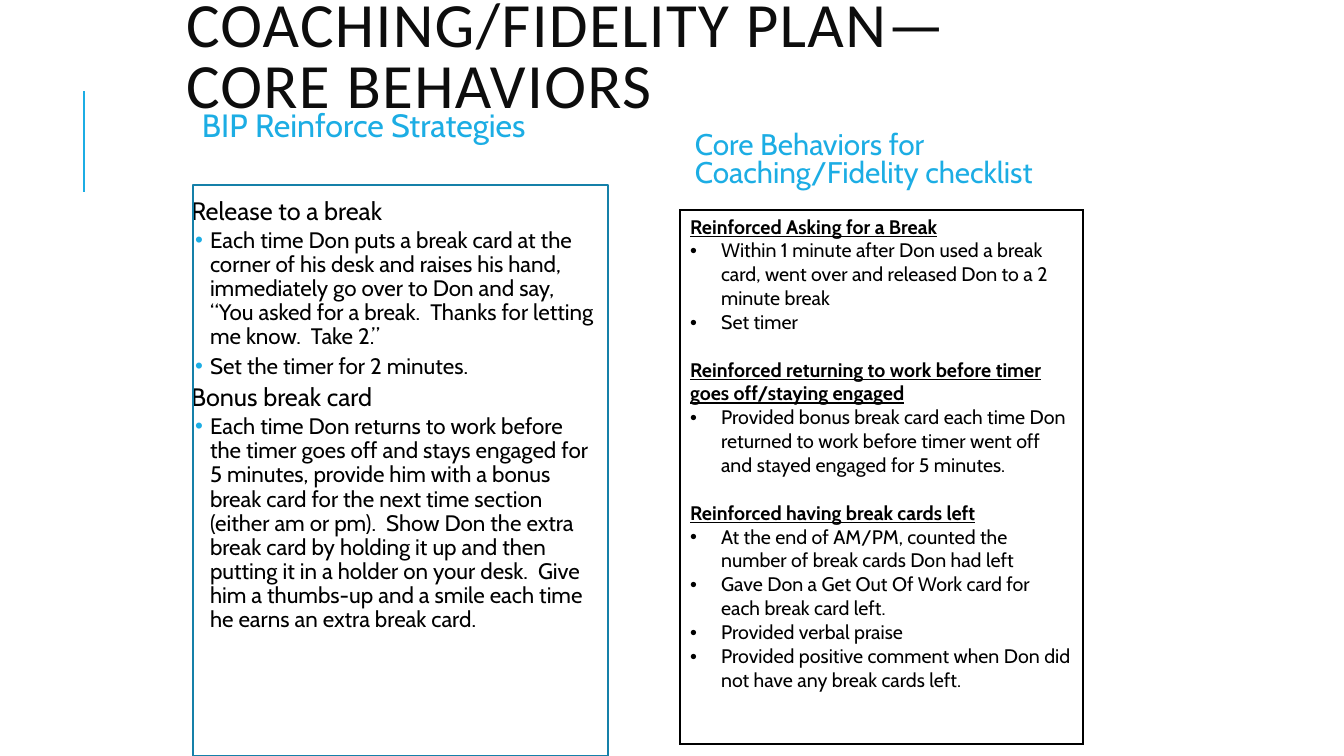
from dataclasses import dataclass

from lxml import etree
from pptx import Presentation
from pptx.dml.color import RGBColor
from pptx.enum.shapes import MSO_CONNECTOR, MSO_SHAPE
from pptx.enum.text import MSO_ANCHOR
from pptx.oxml.ns import qn
from pptx.util import Emu, Pt

STRAIGHT = MSO_CONNECTOR.STRAIGHT
RECTANGLE = MSO_SHAPE.RECTANGLE
TOP, MIDDLE = MSO_ANCHOR.TOP, MSO_ANCHOR.MIDDLE
EMU_PER_PX = 914400 / 100.8


@dataclass(frozen=True)
class Theme:
    heading_font: str = "Calibri"
    body_font: str = "Cabin"
    accent: str = "1CADE4"
    frame: str = "1580A9"
    title_color: str = "0D0D0D"
    text: str = "000000"
    title_size: float = 45
    left_heading_size: float = 23
    right_heading_size: float = 21.3
    strategy_size: float = 18
    step_size: float = 16
    checklist_size: float = 14


THEME = Theme()

STRATEGIES = [
    ("Release to a break", [
        "Each time Don puts a break card at the corner of his desk and raises his hand, "
        "immediately go over to Don and say, “You asked for a break.  Thanks for letting "
        "me know.  Take 2.”",
        "Set the timer for 2 minutes.",
    ]),
    ("Bonus break card", [
        "Each time Don returns to work before the timer goes off and stays engaged for "
        "5 minutes, provide him with a bonus break card for the next time section (either "
        "am or pm).  Show Don the extra break card by holding it up and then putting it in "
        "a holder on your desk.  Give him a thumbs-up and a smile each time he earns an "
        "extra break card.",
    ]),
]

CHECKLIST = [
    ("Reinforced Asking for a Break", [
        "Within 1 minute after Don used a break card, went over and released Don to a "
        "2 minute break",
        "Set timer",
    ]),
    ("Reinforced returning to work before timer goes off/staying engaged", [
        "Provided bonus break card each time Don returned to work before timer went off "
        "and stayed engaged for 5 minutes.",
    ]),
    ("Reinforced having break cards left", [
        "At the end of AM/PM, counted the number of break cards Don had left",
        "Gave Don a Get Out Of Work card for each break card left.",
        "Provided verbal praise",
        "Provided positive comment when Don did not have any break cards left.",
    ]),
]


def px(length):
    return Emu(round(length * EMU_PER_PX))


def rgb(color):
    return RGBColor.from_string(color)


def add_solid_fill(parent, color):
    fill = etree.SubElement(parent, qn("a:solidFill"))
    etree.SubElement(fill, qn("a:srgbClr"), val=color)


def add_frame_text(slide, box, anchor, inset_x):
    frame = slide.shapes.add_textbox(*map(px, box)).text_frame
    frame.word_wrap = True
    frame.vertical_anchor = anchor
    frame.margin_left = frame.margin_right = px(inset_x)
    frame.margin_top = frame.margin_bottom = px(5)
    return frame


def next_paragraph(frame):
    first = frame.paragraphs[0]
    return frame.add_paragraph() if first.runs else first


def add_run(paragraph, text, size, color, font=THEME.body_font):
    run = paragraph.add_run()
    run.text = text
    run.font.name = font
    run.font.size = Pt(size)
    run.font.color.rgb = rgb(color)
    return run


def set_indent(paragraph, left, hanging=0):
    properties = paragraph._p.get_or_add_pPr()
    properties.set("marL", str(px(left)))
    properties.set("indent", str(-px(hanging)))
    return properties


def set_bullet(paragraph, left, hanging, color):
    properties = set_indent(paragraph, left, hanging)
    add_solid_fill_parent = etree.SubElement(properties, qn("a:buClr"))
    etree.SubElement(add_solid_fill_parent, qn("a:srgbClr"), val=color)
    etree.SubElement(properties, qn("a:buFont"), typeface="Arial")
    etree.SubElement(properties, qn("a:buChar"), char="•")


def add_heading(slide, box, text, size, line_spacing, color=THEME.accent,
                font=THEME.body_font, inset_x=15):
    paragraph = add_frame_text(slide, box, MIDDLE, inset_x).paragraphs[0]
    paragraph.line_spacing = line_spacing
    return add_run(paragraph, text, size, color, font)


def add_accent_line(slide):
    line = slide.shapes.add_connector(STRAIGHT, px(84), px(192), px(84), px(91))
    line.line.color.rgb = rgb(THEME.accent)
    line.line.width = Pt(1.5)
    etree.SubElement(line._element.spPr, qn("a:effectLst"))


def add_strategies(slide, box):
    frame = add_frame_text(slide, box, TOP, 5)
    for strategy, steps in STRATEGIES:
        paragraph = next_paragraph(frame)
        set_indent(paragraph, 10)
        paragraph.line_spacing = 0.9
        paragraph.space_after = Pt(2)
        add_run(paragraph, strategy, THEME.strategy_size, THEME.text)
        for step in steps:
            paragraph = next_paragraph(frame)
            set_bullet(paragraph, 29, 15, THEME.accent)
            paragraph.line_spacing = 0.9
            paragraph.space_after = Pt(4)
            add_run(paragraph, step, THEME.step_size, THEME.text)


def set_borders(cell, color, width):
    properties = cell._tc.get_or_add_tcPr()
    for position, side in enumerate(("lnL", "lnR", "lnT", "lnB")):
        border = etree.Element(qn(f"a:{side}"), w=str(Pt(width)))
        add_solid_fill(border, color)
        properties.insert(position, border)


def add_checklist(slide, box):
    table = slide.shapes.add_table(1, 1, *map(px, box)).table
    table.first_row = table.horz_banding = False
    cell = table.cell(0, 0)
    cell.fill.background()
    set_borders(cell, THEME.text, 1)
    frame = cell.text_frame
    for group, (behavior, checks) in enumerate(CHECKLIST):
        paragraph = next_paragraph(frame)
        if group:
            paragraph.space_before = Pt(17)
        heading = add_run(paragraph, behavior, THEME.checklist_size, THEME.text)
        heading.font.bold = heading.font.underline = True
        for check in checks:
            paragraph = next_paragraph(frame)
            set_bullet(paragraph, 31, 31, THEME.text)
            add_run(paragraph, check, THEME.checklist_size, THEME.text)


def add_outline(slide, box):
    outline = slide.shapes.add_shape(RECTANGLE, *map(px, box))
    outline.shadow.inherit = False
    outline.fill.background()
    outline.line.color.rgb = rgb(THEME.frame)
    outline.line.width = Pt(1.25)


def main():
    deck = Presentation()
    deck.slide_width, deck.slide_height = px(1344), px(756)
    slide = deck.slides.add_slide(deck.slide_layouts[6])

    # Title with its accent line
    add_accent_line(slide)
    title = add_heading(slide, (176, -3, 907, 126), "COACHING/FIDELITY PLAN—CORE BEHAVIORS",
                        THEME.title_size, 0.8, THEME.title_color, THEME.heading_font, 10)
    title._r.get_or_add_rPr().set("spc", "100")

    # Strategies column
    add_heading(slide, (187, 92, 446, 70), "BIP Reinforce Strategies",
                THEME.left_heading_size, 0.9)
    add_strategies(slide, (176, 194, 428, 562))
    add_outline(slide, (193, 185, 415, 571))

    # Checklist column
    add_heading(slide, (680, 126, 446, 70), "Core Behaviors for Coaching/Fidelity checklist",
                THEME.right_heading_size, 0.8)
    add_checklist(slide, (680, 210, 403, 534))

    deck.save("out.pptx")


if __name__ == "__main__":
    main()
